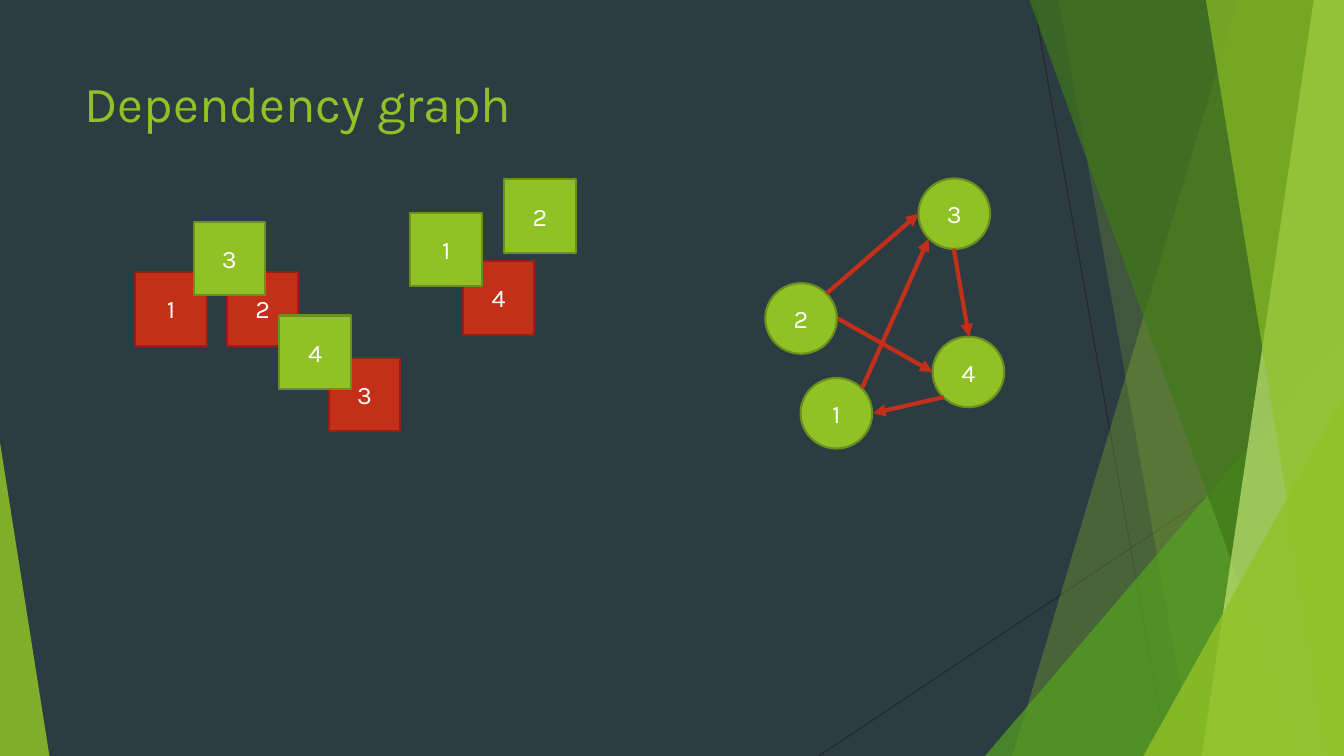
from pptx import Presentation
from pptx.util import Inches, Pt
from pptx.dml.color import RGBColor as RGB
from pptx.enum.shapes import MSO_SHAPE as Shape, MSO_CONNECTOR as Link
from pptx.enum.text import PP_ALIGN as Align, MSO_ANCHOR as Anchor, MSO_AUTO_SIZE as Auto
from pptx.oxml.ns import qn
from lxml.etree import SubElement as Sub

HUES = {
    "back": "2C3C43", "lime": "90C226", "moss": "6B901C", "red": "C42F1A",
    "wine": "912313", "leaf": "54A021", "pine": "3F7819", "pale": "C0E474",
    "ink": "262626", "white": "FFFFFF",
}
HUES = {name: RGB.from_string(code) for name, code in HUES.items()}
WIDE, HIGH = 13.33, 7.5

deck = Presentation()
deck.slide_width, deck.slide_height = Inches(WIDE), Inches(HIGH)
slide = deck.slides.add_slide(deck.slide_layouts[5])
slide.background.fill.solid()
slide.background.fill.fore_color.rgb = HUES["back"]
shapes = slide.shapes


def draw_line(start, end, hue, width):
    line = shapes.add_connector(Link.STRAIGHT, *map(Inches, start + end))
    line.line.color.rgb = HUES[hue]
    line.line.width = Pt(width)
    Sub(line._element.spPr, qn("a:effectLst"))
    return line


def write(shape, text, hue, size, align, anchor):
    frame = shape.text_frame
    frame.text = text
    para = frame.paragraphs[0]
    look = {
        frame: {"word_wrap": True, "auto_size": Auto.NONE, "vertical_anchor": anchor},
        para: {"alignment": align},
        para.runs[0].font: {"name": "Karla", "size": Pt(size)},
    }
    for item, values in look.items():
        for key, value in values.items():
            setattr(item, key, value)
    para.runs[0].font.color.rgb = HUES[hue]


draw_line((10.25, 0), (11.58, HIGH), "ink", 0.75)
draw_line((WIDE, 4.03), (8.12, HIGH), "ink", 0.75)

facets = [
    ("lime", 30, (12.28, 10.04)),
    ("lime", 20, (10.5, 11.83)),
    ("leaf", 72, (9.77, 3.33, 3.56, 4.17, 1)),
    ("pine", 70, (10.21, 12.91)),
    ("pale", 70, (13.03, 11.92)),
    ("lime", 65, (11.96, 13.18)),
    ("lime", 80, (11.34, 3.93, 1.99, 3.57, 1)),
    ("lime", 85, (0, 4.39, 0.49, 3.11, 0)),
]
for hue, alpha, spots in facets:
    if len(spots) == 2:
        top, base = spots
        edge = [(WIDE, 0), (WIDE, HIGH), (base, HIGH)]
        pen = shapes.build_freeform(Inches(top), 0)
        pen.add_line_segments([(Inches(x), Inches(y)) for x, y in edge])
        facet = pen.convert_to_shape()
    else:
        facet = shapes.add_shape(Shape.ISOSCELES_TRIANGLE, *map(Inches, spots[:4]))
        facet.adjustments[0] = spots[4]
    facet.shadow.inherit = False
    facet.fill.solid()
    facet.fill.fore_color.rgb = HUES[hue]
    tint = facet._element.spPr.find(qn("a:solidFill"))[0]
    Sub(tint, qn("a:alpha"), val=str(alpha * 1000))
    facet.line.fill.background()

title = shapes.title
place = {"left": 0.74, "top": 0.67, "width": 9.4, "height": 1.44}
for key, value in place.items():
    setattr(title, key, Inches(value))
write(title, "Dependency graph", "lime", 36, Align.LEFT, Anchor.TOP)

nodes = [
    (Shape.RECTANGLE, 0.73, "red", "wine",
     [("1", 1.34, 2.7), ("2", 2.25, 2.7), ("3", 3.26, 3.55), ("4", 4.59, 2.59)]),
    (Shape.RECTANGLE, 0.73, "lime", "moss",
     [("1", 4.07, 2.11), ("4", 2.77, 3.13), ("3", 1.92, 2.2), ("2", 5, 1.78)]),
    (Shape.OVAL, 0.7, "lime", "moss",
     [("1", 7.94, 3.75), ("3", 9.11, 1.77), ("2", 7.59, 2.81), ("4", 9.25, 3.34)]),
]
for kind, tall, hue, rim, spots in nodes:
    for label, left, top in spots:
        node = shapes.add_shape(kind, *map(Inches, (left, top, 0.71, tall)))
        node.shadow.inherit = False
        node.fill.solid()
        node.fill.fore_color.rgb = HUES[hue]
        node.line.color.rgb = HUES[rim]
        node.line.width = Pt(1.5)
        write(node, label, "white", 18, Align.CENTER, Anchor.MIDDLE)

arrows = [
    ((8.31, 3.16), (9.25, 3.69)),
    ((9.46, 2.47), (9.61, 3.34)),
    ((9.36, 3.94), (8.66, 4.1)),
    ((8.2, 2.91), (9.11, 2.12)),
    ((8.55, 3.85), (9.21, 2.37)),
]
for start, end in arrows:
    arrow = draw_line(start, end, "red", 3)
    Sub(arrow.line._get_or_add_ln(), qn("a:tailEnd"), type="triangle")

deck.save("out.pptx")
